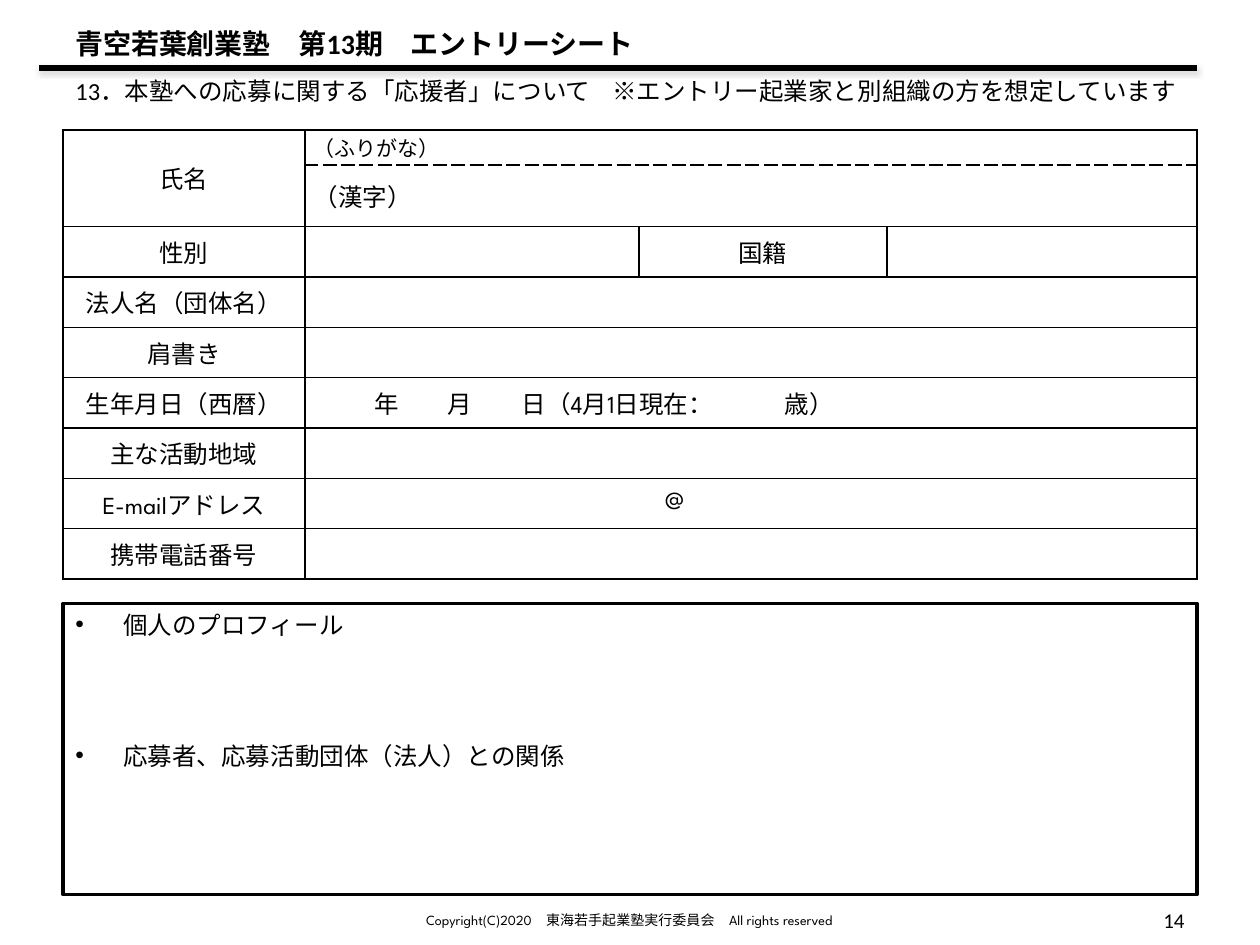
import pptx
import pptx.dml.color
import pptx.enum.shapes
import pptx.enum.text
import pptx.oxml
import pptx.oxml.ns
import pptx.util

BLACK = pptx.dml.color.RGBColor(0x00, 0x00, 0x00)
WHITE = pptx.dml.color.RGBColor(0xFF, 0xFF, 0xFF)
SHADOW_GREY = pptx.dml.color.RGBColor(0x80, 0x80, 0x80)

ALIGN = pptx.enum.text.PP_ALIGN
ANCHOR = pptx.enum.text.MSO_ANCHOR
BODY_FONT = "Calibri"
FORM_FONT = "League Spartan"

SLIDE_WIDTH = pptx.util.Inches(10)
SLIDE_HEIGHT = pptx.util.Inches(7.5)
MARGIN = 5
CONTENT_WIDTH = 90
COLUMN_WIDTHS = (19.2, 26.5, 19.7, 24.6)
ROW_HEIGHTS = (3.73, 6.53) + (5.33,) * 7

LABELS = {
    0: "氏名", 2: "性別", 3: "法人名（団体名）", 4: "肩書き", 5: "生年月日（西暦）",
    6: "主な活動地域", 7: "E-mailアドレス", 8: "携帯電話番号",
}
ENTRIES = {
    0: ("（ふりがな）", 12, ()),
    1: ("（漢字）", 14, ()),
    5: ("\t年\t月\t日（4月1日現在：\t歳）", 14, (0.48, 1.06, 1.65, 3.74)),
    7: ("\t@", 14, (2.79,)),
}


def across(percent):
    """Return a percentage of the slide's width."""
    return round(SLIDE_WIDTH * percent / 100)


def down(percent):
    """Return a percentage of the slide's height."""
    return round(SLIDE_HEIGHT * percent / 100)


def area(left, top, width, height):
    """Return a box given in percentages of the slide."""
    return across(left), down(top), across(width), down(height)


def add_xml(parent, markup):
    """Append a drawing element to its parent."""
    namespace = pptx.oxml.ns.nsdecls("a")
    tag, rest = markup.split(">", 1)
    closing = "/" if tag.endswith("/") else ""
    parent.append(pptx.oxml.parse_xml(f"{tag.rstrip('/')} {namespace}{closing}>{rest}"))


def write(paragraph, text, size, font, align=ALIGN.LEFT, bold=False, tabs=()):
    """Fill a paragraph and style it, with tab stops in inches."""
    paragraph.text = text
    paragraph.alignment = align
    if tabs:
        stops = "".join(
            f'<a:tab pos="{pptx.util.Inches(stop)}" algn="l"/>' for stop in tabs)
        add_xml(paragraph._p.get_or_add_pPr(), f"<a:tabLst>{stops}</a:tabLst>")
    paragraph.font.size = pptx.util.Pt(size)
    paragraph.font.name = font
    paragraph.font.bold = bold
    paragraph.font.color.rgb = BLACK


def add_text(slide, box, text, size, font=BODY_FONT, anchor=ANCHOR.MIDDLE, **style):
    """Add a wrapping text box with one paragraph."""
    frame = slide.shapes.add_textbox(*box).text_frame
    frame.word_wrap = True
    frame.vertical_anchor = anchor
    write(frame.paragraphs[0], text, size, font, **style)


def add_header_rule(slide):
    """Add the thick line with a soft shadow below the header."""
    line = slide.shapes.add_connector(
        pptx.enum.shapes.MSO_CONNECTOR.STRAIGHT,
        across(3.1), down(7.2), across(95), down(7.2))
    line.line.color.rgb = BLACK
    line.line.width = pptx.util.Pt(3)
    add_xml(line._element.spPr, (
        f'<a:effectLst><a:outerShdw blurRad="{pptx.util.Pt(3.1)}" '
        f'dist="{pptx.util.Pt(1.6)}" dir="5400000" rotWithShape="0">'
        f'<a:srgbClr val="{SHADOW_GREY}"><a:alpha val="38000"/></a:srgbClr>'
        '</a:outerShdw></a:effectLst>'))


def format_cell(cell, dashed_side):
    """Give a cell its margins, black borders and empty fill."""
    cell.margin_left = cell.margin_right = pptx.util.Inches(0.07)
    cell.margin_top = cell.margin_bottom = pptx.util.Inches(0.02)
    cell.vertical_anchor = ANCHOR.MIDDLE
    properties = cell._tc.get_or_add_tcPr()
    for side in "LRTB":
        dash = "dash" if side == dashed_side else "solid"
        add_xml(properties, (
            f'<a:ln{side} w="{pptx.util.Pt(1)}"><a:solidFill>'
            f'<a:srgbClr val="{BLACK}"/></a:solidFill>'
            f'<a:prstDash val="{dash}"/></a:ln{side}>'))
    cell.fill.background()


def add_form(slide):
    """Add the table of personal details."""
    box = area(MARGIN, 13.73, CONTENT_WIDTH, sum(ROW_HEIGHTS))
    table = slide.shapes.add_table(len(ROW_HEIGHTS), len(COLUMN_WIDTHS), *box).table
    table.first_row = table.horz_banding = False
    for column, width in zip(table.columns, COLUMN_WIDTHS):
        column.width = across(width)
    for index, height in enumerate(ROW_HEIGHTS):
        table.rows[index].height = down(height)
        for number, cell in enumerate(table.rows[index].cells):
            dashed_side = {0: "B", 1: "T"}.get(index) if number else None
            format_cell(cell, dashed_side)
        if index != 2:
            table.cell(index, 1).merge(table.cell(index, 3))
    table.cell(0, 0).merge(table.cell(1, 0))
    for row, label in LABELS.items():
        write(table.cell(row, 0).text_frame.paragraphs[0], label, 14, FORM_FONT, ALIGN.CENTER)
    write(table.cell(2, 2).text_frame.paragraphs[0], "国籍", 14, FORM_FONT, ALIGN.CENTER)
    for row, (text, size, tabs) in ENTRIES.items():
        paragraph = table.cell(row, 1).text_frame.paragraphs[0]
        write(paragraph, text, size, FORM_FONT, ALIGN.JUSTIFY, tabs=tabs)


def add_answer_box(slide, questions):
    """Add the framed box with bulleted questions and room to answer."""
    shape = slide.shapes.add_shape(
        pptx.enum.shapes.MSO_SHAPE.RECTANGLE, *area(MARGIN, 63.87, CONTENT_WIDTH, 30.8))
    shape.shadow.inherit = False
    shape.fill.solid()
    shape.fill.fore_color.rgb = WHITE
    shape.line.color.rgb = BLACK
    shape.line.width = pptx.util.Pt(2)
    frame = shape.text_frame
    frame.word_wrap = True
    frame.vertical_anchor = ANCHOR.TOP
    indent = pptx.util.Inches(0.38)
    for index, question in enumerate(questions):
        paragraph = frame.add_paragraph() if index else frame.paragraphs[0]
        if index:
            paragraph.space_before = pptx.util.Pt(58)
        properties = paragraph._p.get_or_add_pPr()
        properties.set("marL", str(indent))
        properties.set("indent", str(-indent))
        add_xml(properties, f'<a:buClr><a:srgbClr val="{BLACK}"/></a:buClr>')
        add_xml(properties, '<a:buFont typeface="Arial"/>')
        add_xml(properties, '<a:buChar char="•"/>')
        write(paragraph, question, 14, BODY_FONT)


def main():
    """Build the entry sheet and save it."""
    presentation = pptx.Presentation()
    presentation.slide_width = SLIDE_WIDTH
    presentation.slide_height = SLIDE_HEIGHT
    slide = presentation.slides.add_slide(presentation.slide_layouts[6])
    add_text(slide, area(MARGIN, 2.13, CONTENT_WIDTH, 9.87),
             "青空若葉創業塾　第13期　エントリーシート", 16, anchor=ANCHOR.TOP, bold=True)
    add_header_rule(slide)
    add_form(slide)
    add_text(slide, area(MARGIN, 7.2, CONTENT_WIDTH, 4.8),
             "13．本塾への応募に関する「応援者」について\t※エントリー起業家と別組織の方を想定しています",
             14, tabs=(4.26,))
    add_answer_box(slide, ("個人のプロフィール", "応募者、応募活動団体（法人）との関係"))
    add_text(slide, area(71.7, 94.67, 23.3, 5.33), "14", 12, align=ALIGN.RIGHT)
    add_text(slide, area(28.3, 94.67, 43.3, 5.33),
             "Copyright(C)2020　東海若手起業塾実行委員会　All rights reserved",
             8, FORM_FONT, align=ALIGN.CENTER)
    presentation.save("out.pptx")


if __name__ == "__main__":
    main()
